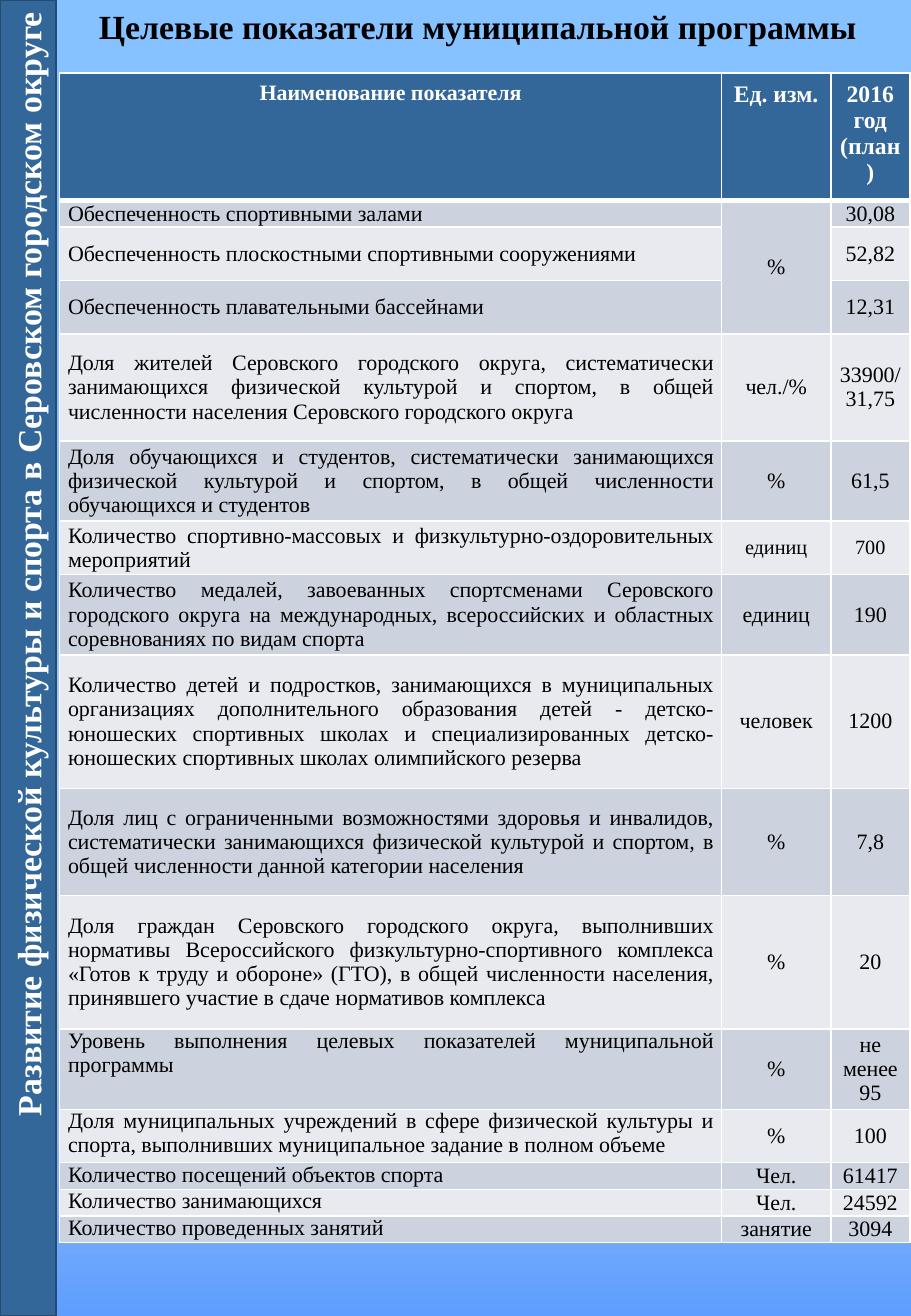
"""Build the slide with the target indicators of the municipal sports programme."""
from copy import deepcopy
from dataclasses import dataclass

from lxml import etree
from pptx import Presentation
from pptx.dml.color import RGBColor
from pptx.enum import shapes, text
from pptx.oxml import ns
from pptx.util import Inches, Pt

TITLE = "Целевые показатели муниципальной программы"
PROGRAMME = "Развитие физической культуры и спорта в Серовском городском округе"
HEADER = ("Наименование показателя", "Ед. изм.", "2016 год\n(план)")
INDICATORS = [
    ("Обеспеченность спортивными залами", "%", "30,08"),
    ("Обеспеченность плоскостными спортивными сооружениями", "", "52,82"),
    ("Обеспеченность плавательными бассейнами", "", "12,31"),
    ("Доля жителей Серовского городского округа, систематически занимающихся физической "
     "культурой и спортом, в общей численности населения Серовского городского округа",
     "чел./%", "33900/ 31,75"),
    ("Доля обучающихся и студентов, систематически занимающихся физической культурой и "
     "спортом, в общей численности обучающихся и студентов", "%", "61,5"),
    ("Количество спортивно-массовых и физкультурно-оздоровительных мероприятий",
     "единиц", "700"),
    ("Количество медалей, завоеванных спортсменами Серовского городского округа на "
     "международных, всероссийских и областных соревнованиях по видам спорта",
     "единиц", "190"),
    ("Количество детей и подростков, занимающихся в муниципальных организациях "
     "дополнительного образования детей - детско-юношеских спортивных школах и "
     "специализированных детско-юношеских спортивных школах олимпийского резерва",
     "человек", "1200"),
    ("Доля лиц с ограниченными возможностями здоровья и инвалидов, систематически "
     "занимающихся физической культурой и спортом, в общей численности данной категории "
     "населения", "%", "7,8"),
    ("Доля граждан Серовского городского округа, выполнивших нормативы Всероссийского "
     "физкультурно-спортивного комплекса «Готов к труду и обороне» (ГТО), в общей "
     "численности населения, принявшего участие в сдаче нормативов комплекса", "%", "20"),
    ("Уровень выполнения целевых показателей муниципальной программы", "%", "не менее 95"),
    ("Доля муниципальных учреждений в сфере физической культуры и спорта, выполнивших "
     "муниципальное задание в полном объеме", "%", "100"),
    ("Количество посещений объектов спорта", "Чел.", "61417"),
    ("Количество занимающихся", "Чел.", "24592"),
    ("Количество проведенных занятий", "занятие", "3094"),
]
COLUMN_WIDTHS = (5.45, 0.9, 0.65)
HEADER_HEIGHT, LINE_HEIGHT = 1.05, 0.22
ROW_LINES = (1, 2, 2, 4, 3, 2, 3, 5, 4, 5, 3, 2, 1, 1, 1)
SHARED_UNIT_ROWS = (1, 3)
SMALL_FIGURES_ROW = 6
FIRST_TOP_ROW = 11
PAGE_WIDTH, PAGE_HEIGHT, BAND_WIDTH = 7.5, 10.83, 0.46


@dataclass(frozen=True)
class Theme:
    """Colours, type sizes and line widths."""
    font: str = "Times New Roman"
    ink: str = "000000"
    white: str = "FFFFFF"
    accent: str = "336699"
    outline: str = "264B71"
    stripes: tuple = ("CDD3DE", "E8EAEF")
    sky: tuple = ((0, "85C2FF"), (0.4, "85C2FF"), (0.7, "C4D6EB"), (1, "5E9EFF"))
    heading: int = 20
    header: int = 14
    body: int = 13
    small: int = 12
    rule: int = 1
    header_rule: int = 3


THEME = Theme()


def paint(fill, colour):
    """Give a fill one solid colour."""
    fill.solid()
    fill.fore_color.rgb = RGBColor.from_string(colour)


def write(frame, words, size, colour, bold, align):
    """Put words into a text frame in one style."""
    frame.text = words
    frame.word_wrap = True
    for para in frame.paragraphs:
        para.alignment = align
        para.font.name = THEME.font
        para.font.size = Pt(size)
        para.font.bold = bold
        para.font.color.rgb = RGBColor.from_string(colour)


def rule_cell(cell, row):
    """Draw the white borders of a cell, heavier below the header."""
    heavy = {0: "lnB", 1: "lnT"}.get(row)
    properties = cell._tc.get_or_add_tcPr()
    for side in ("lnL", "lnR", "lnT", "lnB"):
        width = THEME.header_rule if side == heavy else THEME.rule
        line = etree.SubElement(properties, ns.qn(f"a:{side}"), w=str(Pt(width)))
        solid = etree.SubElement(line, ns.qn("a:solidFill"))
        etree.SubElement(solid, ns.qn("a:srgbClr"), val=THEME.white)


def style_cell(cell, row, column, words):
    """Fill, border and write one table cell."""
    is_header = row == 0
    cell.margin_left = cell.margin_right = Inches(0.07)
    cell.margin_top = cell.margin_bottom = Inches(0.07 if is_header else 0)
    at_top = is_header or (column == 0 and row >= FIRST_TOP_ROW)
    cell.vertical_anchor = text.MSO_ANCHOR.TOP if at_top else text.MSO_ANCHOR.MIDDLE
    rule_cell(cell, row)
    paint(cell.fill, THEME.accent if is_header else THEME.stripes[(row - 1) % 2])
    size = THEME.body
    if is_header and column:
        size = THEME.header
    elif row == SMALL_FIGURES_ROW and column:
        size = THEME.small
    justified = column == 0 and not is_header
    align = text.PP_ALIGN.JUSTIFY if justified else text.PP_ALIGN.CENTER
    write(cell.text_frame, words, size, THEME.white if is_header else THEME.ink,
          is_header, align)


def add_background(page):
    """Fill the page with the sky gradient."""
    fill = page.background.fill
    fill.gradient()
    fill.gradient_angle = 270
    stops = page.element.xpath(".//a:gsLst")[0]
    while len(stops) < len(THEME.sky):
        stops.append(deepcopy(stops[-1]))
    for stop, (position, colour) in zip(fill.gradient_stops, THEME.sky):
        stop.position = position
        stop.color.rgb = RGBColor.from_string(colour)


def add_title(page):
    """Place the page title."""
    title = page.shapes.title
    title.left, title.top = Inches(0.67), Inches(0)
    title.width, title.height = Inches(6.53), Inches(0.44)
    frame = title.text_frame
    frame.auto_size = text.MSO_AUTO_SIZE.NONE
    frame.vertical_anchor = text.MSO_ANCHOR.TOP
    write(frame, TITLE, THEME.heading, THEME.ink, True, text.PP_ALIGN.CENTER)


def add_indicators(page):
    """Place the table of indicators."""
    rows = [HEADER, *INDICATORS]
    heights = [HEADER_HEIGHT, *(LINE_HEIGHT * lines for lines in ROW_LINES)]
    table = page.shapes.add_table(
        len(rows), len(HEADER), Inches(0.49), Inches(0.6),
        Inches(sum(COLUMN_WIDTHS)), Inches(sum(heights))).table
    for column, width in zip(table.columns, COLUMN_WIDTHS):
        column.width = Inches(width)
    for row, height in zip(table.rows, heights):
        row.height = Inches(height)
    for row, entries in enumerate(rows):
        for column, words in enumerate(entries):
            style_cell(table.cell(row, column), row, column, words)
    first, last = SHARED_UNIT_ROWS
    table.cell(first, 1).merge(table.cell(last, 1))


def add_programme_band(page):
    """Place the turned programme name along the left edge."""
    offset = (PAGE_HEIGHT - BAND_WIDTH) / 2
    band = page.shapes.add_shape(
        shapes.MSO_SHAPE.RECTANGLE, Inches(-offset), Inches(offset),
        Inches(PAGE_HEIGHT), Inches(BAND_WIDTH))
    band.rotation = 270
    band.shadow.inherit = False
    paint(band.fill, THEME.accent)
    paint(band.line.fill, THEME.outline)
    band.line.width = Pt(THEME.rule)
    band.text_frame.vertical_anchor = text.MSO_ANCHOR.MIDDLE
    write(band.text_frame, PROGRAMME, THEME.heading, THEME.white, True, text.PP_ALIGN.RIGHT)


def main():
    """Build and save the deck."""
    deck = Presentation()
    deck.slide_width, deck.slide_height = Inches(PAGE_WIDTH), Inches(PAGE_HEIGHT)
    page = deck.slides.add_slide(deck.slide_layouts.get_by_name("Title Only"))
    add_background(page)
    add_title(page)
    add_indicators(page)
    add_programme_band(page)
    deck.save("out.pptx")


if __name__ == "__main__":
    main()
